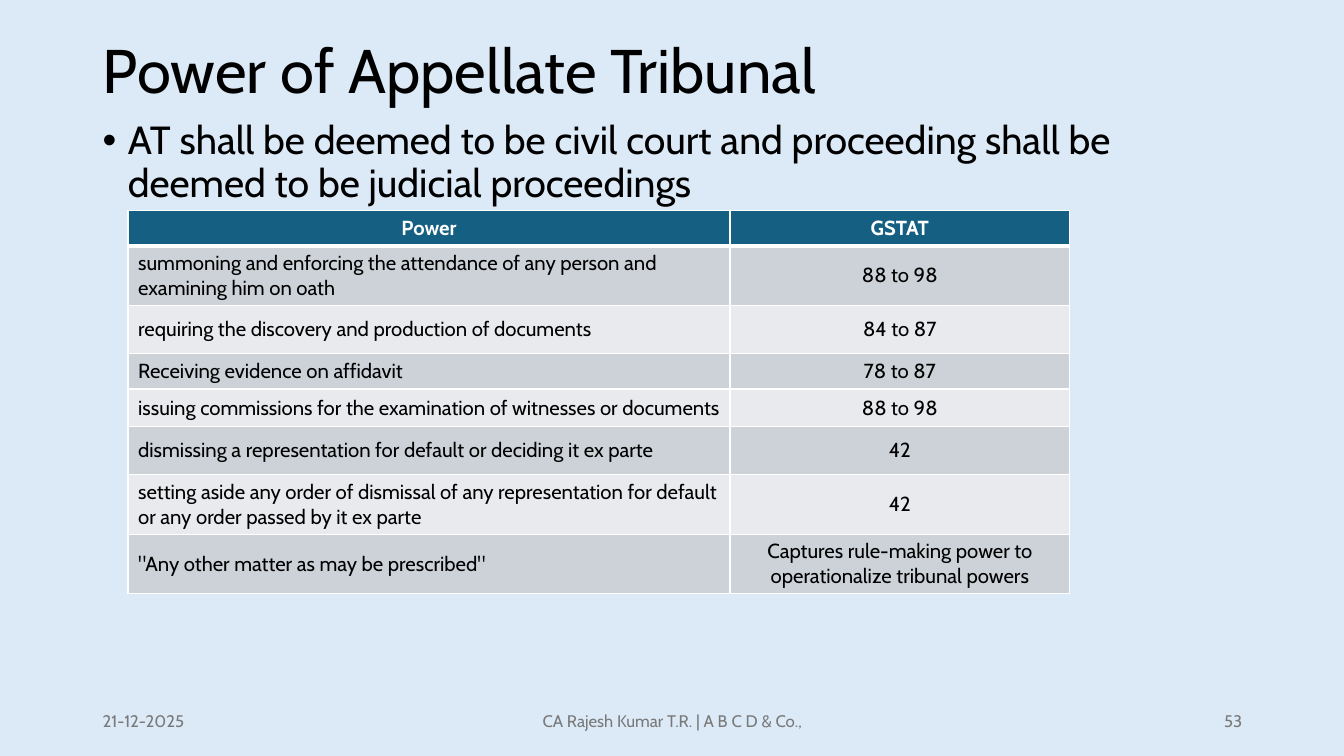
from pptx import Presentation
from pptx.dml.color import RGBColor
from pptx.enum import text as txt
from pptx.oxml import parse_xml
from pptx.oxml.ns import nsdecls
from pptx.util import Inches, Pt

BLACK = RGBColor(0x00, 0x00, 0x00)
WHITE = RGBColor(0xFF, 0xFF, 0xFF)
GREY = RGBColor(0x79, 0x79, 0x79)
SKY = RGBColor(0xDC, 0xEA, 0xF7)
TEAL = RGBColor(0x15, 0x60, 0x82)
DARK = RGBColor(0xCC, 0xD2, 0xD8)
LIGHT = RGBColor(0xE8, 0xEA, 0xED)
LEFT, MID, RIGHT = txt.PP_ALIGN.LEFT, txt.PP_ALIGN.CENTER, txt.PP_ALIGN.RIGHT


def write(frame, words, size, color, align=LEFT, bold=False):
    frame.text = words
    frame.word_wrap = True
    par = frame.paragraphs[0]
    par.alignment = align
    font = par.runs[0].font
    font.name, font.size, font.bold = "Cabin", Pt(size), bold
    font.color.rgb = color
    return par


def edge(cell, side, width):
    cell._tc.get_or_add_tcPr().append(parse_xml(
        f'<a:{side} {nsdecls("a")} w="{Pt(width)}"><a:solidFill>'
        f'<a:srgbClr val="{WHITE}"/></a:solidFill></a:{side}>'))


deck = Presentation()
deck.slide_width, deck.slide_height = Inches(13.33), Inches(7.5)
slide = deck.slides.add_slide(deck.slide_layouts[5])
slide.background.fill.solid()
slide.background.fill.fore_color.rgb = SKY

title = slide.shapes.title
title.left, title.top = Inches(0.92), Inches(0)
title.width, title.height = Inches(11.5), Inches(1.45)
par = write(title.text_frame, "Power of Appellate Tribunal", 44, BLACK)
par.line_spacing = 0.9
title.text_frame.vertical_anchor = txt.MSO_ANCHOR.MIDDLE

body = slide.shapes.add_textbox(Inches(0.92), Inches(1.15), Inches(11.5), Inches(5.61))
par = write(body.text_frame, "AT shall be deemed to be civil court and proceeding shall be "
            "deemed to be judicial proceedings", 28, BLACK)
par.line_spacing, par.space_before = 0.9, Pt(10)
props = par._p.get_or_add_pPr()
props.set("marL", str(Inches(0.25)))
props.set("indent", str(Inches(-0.25)))
props.append(parse_xml(f'<a:buFont {nsdecls("a")} typeface="Arial"/>'))
props.append(parse_xml(f'<a:buChar {nsdecls("a")} char="•"/>'))

for left, width, words, align in [
    (0.92, 3, "21-12-2025", LEFT),
    (4.42, 4.5, "CA Rajesh Kumar T.R. | A B C D & Co.,", MID),
    (9.42, 3, "53", RIGHT),
]:
    foot = slide.shapes.add_textbox(Inches(left), Inches(6.95), Inches(width), Inches(0.4))
    foot.text_frame.vertical_anchor = txt.MSO_ANCHOR.MIDDLE
    write(foot.text_frame, words, 12, GREY, align)

rows = [
    (0.35, "Power", "GSTAT"),
    (0.59, "summoning and enforcing the attendance of any person and examining him on oath",
     "88 to 98"),
    (0.48, "requiring the discovery and production of documents", "84 to 87"),
    (0.35, "Receiving evidence on affidavit", "78 to 87"),
    (0.37, "issuing commissions for the examination of witnesses or documents", "88 to 98"),
    (0.48, "dismissing a representation for default or deciding it ex parte", "42"),
    (0.59, "setting aside any order of dismissal of any representation for default "
     "or any order passed by it ex parte", "42"),
    (0.59, '"Any other matter as may be prescribed"',
     "Captures rule-making power to operationalize tribunal powers"),
]
table = slide.shapes.add_table(len(rows), 2, Inches(1.27), Inches(2.09),
                               Inches(9.34), Inches(3.8)).table
table.columns[0].width, table.columns[1].width = Inches(5.97), Inches(3.37)
for r, (height, *words) in enumerate(rows):
    table.rows[r].height = Inches(height)
    head = r == 0
    for c, word in enumerate(words):
        cell = table.cell(r, c)
        write(cell.text_frame, word, 14.5, WHITE if head else BLACK,
              MID if head or c else LEFT, head)
        cell.vertical_anchor = txt.MSO_ANCHOR.MIDDLE
        for side in ("lnL", "lnR", "lnT", "lnB"):
            thick = (r, side) in ((0, "lnB"), (1, "lnT"))
            edge(cell, side, 3 if thick else 1)
        cell.fill.solid()
        cell.fill.fore_color.rgb = TEAL if head else DARK if r % 2 else LIGHT

deck.save("out.pptx")
